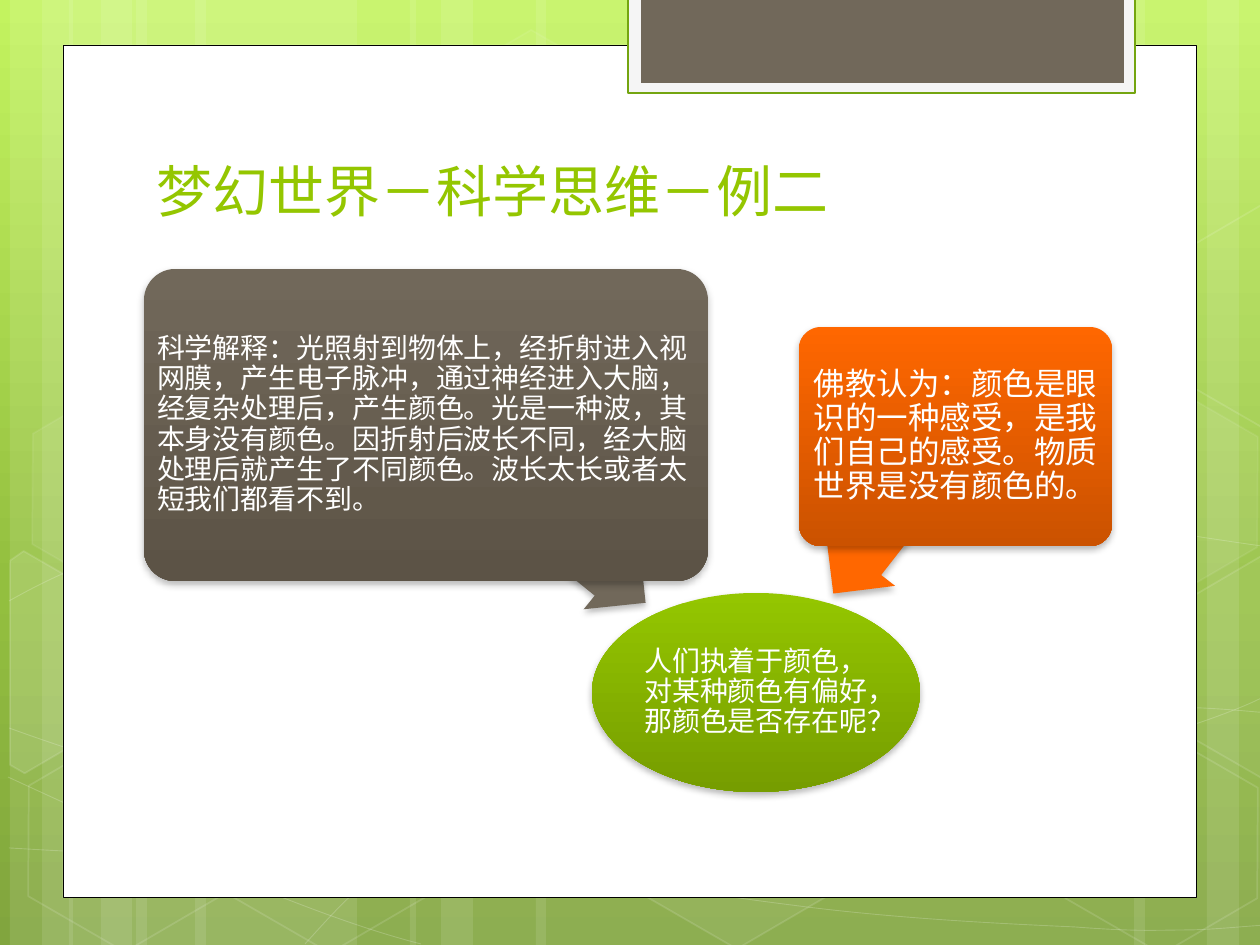
"""Builds the slide on colour as seen by science and by Buddhism."""
from copy import deepcopy

from lxml import etree
from pptx import Presentation
from pptx.dml.color import RGBColor
from pptx.enum.shapes import MSO_SHAPE
from pptx.enum.text import MSO_ANCHOR, PP_ALIGN
from pptx.oxml.ns import qn
from pptx.util import Pt

RECTANGLE, HEXAGON, ELLIPSE = MSO_SHAPE.RECTANGLE, MSO_SHAPE.HEXAGON, MSO_SHAPE.OVAL
ROUNDED, ARROW = MSO_SHAPE.ROUNDED_RECTANGLE, MSO_SHAPE.LEFT_ARROW
MIDDLE, BOTTOM = MSO_ANCHOR.MIDDLE, MSO_ANCHOR.BOTTOM
LEFT, CENTER = PP_ALIGN.LEFT, PP_ALIGN.CENTER
PX = 914400 / 126

THEME = {
    "font": "League Spartan", "title": 32, "large": 18, "body": 16,
    "white": "FFFFFF", "black": "000000", "pale": "F5F5F5", "border": "74A510",
    "green": "94C600", "green_dark": "769D00",
    "brown": "71685A", "brown_dark": "5C5346",
    "orange": "FF6700", "orange_dark": "CB5200",
    "background": [(0, "C3F35F"), (0.62, "93BF3F"), (1, "81A53E")],
}


def paint(shape, fills=(), fill_alpha=100, line=None, line_width=1, line_alpha=100, shadow=False):
    shape.shadow.inherit = False
    if len(fills) == 2:
        shape.fill.gradient()
        shape.fill.gradient_angle = 270
        for stop, position, name in zip(shape.fill.gradient_stops, (0, 1), fills):
            stop.position = position
            stop.color.rgb = RGBColor.from_string(THEME[name])
    elif fills:
        shape.fill.solid()
        shape.fill.fore_color.rgb = RGBColor.from_string(THEME[fills[0]])
    else:
        shape.fill.background()
    if line:
        shape.line.color.rgb = RGBColor.from_string(THEME[line])
        shape.line.width = Pt(line_width)
    else:
        shape.line.fill.background()
    for location, alpha in (("", fill_alpha), ("a:ln/", line_alpha)):
        if alpha < 100:
            for color in shape.element.xpath(f"./p:spPr/{location}a:solidFill/a:srgbClr"):
                etree.SubElement(color, qn("a:alpha"), val=str(alpha * 1000))
    if shadow:
        effects = shape.element.xpath("./p:spPr/a:effectLst")[0]
        outer = etree.SubElement(effects, qn("a:outerShdw"), blurRad=str(Pt(4)),
                                 dist=str(Pt(2)), dir="5400000", rotWithShape="0")
        color = etree.SubElement(outer, qn("a:srgbClr"), val=THEME["black"])
        etree.SubElement(color, qn("a:alpha"), val="28000")


def write(shape, text, size, color, anchor, alignment, spacing, inset=None):
    frame = shape.text_frame
    frame_format = {"word_wrap": True, "vertical_anchor": anchor}
    if inset is not None:
        for side in ("left", "top", "right", "bottom"):
            frame_format[f"margin_{side}"] = round(inset * PX)
    paragraph = frame.paragraphs[0]
    run = paragraph.add_run()
    run.text = text
    formats = (
        (frame, frame_format),
        (paragraph, {"alignment": alignment, "line_spacing": spacing}),
        (run.font, {"name": THEME["font"], "size": Pt(THEME[size])}),
        (run.font.color, {"rgb": RGBColor.from_string(THEME[color])}),
    )
    for target, values in formats:
        for name, value in values.items():
            setattr(target, name, value)


presentation = Presentation()
presentation.slide_width = round(1260 * PX)
presentation.slide_height = round(945 * PX)
slide = presentation.slides.add_slide(presentation.slide_layouts[6])
shapes = slide.shapes

background = slide.background.fill
background.gradient()
background.gradient_angle = 270
stop_list = slide.element.xpath(".//a:gsLst")[0]
stop_list.append(deepcopy(stop_list[-1]))
for stop, (position, color) in zip(background.gradient_stops, THEME["background"]):
    stop.position = position
    stop.color.rgb = RGBColor.from_string(color)

STRIPES = [(136, 221), (10, 63), (42, 105), (195, 221), (69, 63), (101, 105),
           (924, 221), (1207, 63), (1134, 105), (536, 388), (410, 63), (441, 105)]
for left, width in STRIPES:
    stripe = shapes.add_shape(RECTANGLE, *(round(v * PX) for v in (left, 0, width, 945)))
    paint(stripe, ["white"], 10)

CURVES = [
    [(9, 848), (77, 852), (145, 856), (239, 854), (334, 853), (451, 851), (577, 838),
     (703, 825), (882, 801), (998, 777), (1113, 753), (1231, 716), (1269, 694)],
    [(9, 601), (45, 581), (82, 562), (152, 543), (224, 524), (326, 496), (437, 488),
     (549, 479), (685, 478), (824, 488), (963, 498), (1193, 537), (1269, 547)],
    [(8, 777), (160, 847), (311, 916), (421, 944)],
    [(9, 728), (48, 742), (88, 756), (161, 776), (234, 795), (344, 827), (450, 848),
     (554, 869), (687, 892), (791, 905), (896, 919), (1008, 924), (1075, 927),
     (1140, 932), (1158, 930), (1191, 930), (1223, 929), (1246, 926), (1269, 925)],
    [(305, 944), (328, 919), (350, 893), (381, 871), (411, 848), (454, 823), (489, 805),
     (524, 788), (546, 780), (592, 767), (638, 754), (722, 737), (766, 728),
     (811, 719), (818, 719), (857, 717), (896, 713), (958, 709), (1000, 708),
     (1045, 707), (1116, 708), (1116, 708), (1116, 708), (1201, 708), (1201, 708),
     (1223, 709), (1245, 711), (1256, 712), (1268, 713), (1264, 712), (1268, 713)],
]
for points in CURVES:
    builder = shapes.build_freeform(*points[0], scale=PX)
    builder.add_line_segments(points[1:], close=False)
    curve = builder.convert_to_shape()
    segments = curve.element.xpath(".//a:lnTo")
    for first in range(0, len(segments), 3):
        bezier = etree.Element(qn("a:cubicBezTo"))
        segments[first].addprevious(bezier)
        for segment in segments[first:first + 3]:
            bezier.append(segment[0])
            segment.getparent().remove(segment)
    paint(curve, line="white", line_width=0.5, line_alpha=20)

HEXAGONS = [(421, 45, 4, 8), (626, 742, 6, 12), (14, 745, 0, 12), (18, 393, 7, 8),
            (219, 746, 0, 12), (949, 571, 10, 12), (1051, 747, 0, 12), (1051, 396, 7, 8)]
for left, top, fill_alpha, line_alpha in HEXAGONS:
    hexagon = shapes.add_shape(HEXAGON, *(round(v * PX) for v in (left, top, 221, 192)))
    hexagon.adjustments[0] = 0.285
    hexagon.rotation = 30
    paint(hexagon, ["white"] if fill_alpha else [], fill_alpha, "white", 1, line_alpha)

CUT_LEFT = [(0, 15), (7, 0), (119, 0), (173, 97), (119, 192), (102, 192)]
CUT_RIGHT = [(0, 95), (54, 0), (65, 0), (171, 182), (166, 192), (55, 192)]
CUT_HEXAGONS = [(-42, 578, 10, CUT_LEFT), (1155, 559, 4, CUT_RIGHT), (1155, 208, 0, CUT_RIGHT)]
for left, top, fill_alpha, corners in CUT_HEXAGONS:
    builder = shapes.build_freeform(*corners[0], scale=PX)
    builder.add_line_segments(corners[1:], close=True)
    cut_hexagon = builder.convert_to_shape(round(left * PX), round(top * PX))
    cut_hexagon.rotation = 30
    paint(cut_hexagon, ["white"] if fill_alpha else [], fill_alpha, "white", 1, 12)

PANELS = [((63, 45, 1134, 853), "white", "black", 0.5),
          ((628, -3, 507, 96), "pale", "border", 1.25),
          ((641, -3, 483, 86), "brown", None, 0)]
for box, fill, line, width in PANELS:
    panel = shapes.add_shape(RECTANGLE, *(round(v * PX) for v in box))
    paint(panel, [fill], line=line, line_width=width)

title = shapes.add_textbox(*(round(v * PX) for v in (144, 142, 968, 88)))
write(title, "梦幻世界－科学思维－例二", "title", "green", BOTTOM, LEFT, 1)

DIAGRAM = [
    (ELLIPSE, (592, 593, 328, 199), 0, [], ["green", "green_dark"],
     ("人们执着于颜色，对某种颜色有偏好，那颜色是否存在呢？", "body", CENTER, 1)),
    (ARROW, (395, 470, 282, 88), 219, [0.6, 0.5], ["brown"], None),
    (ROUNDED, (144, 269, 564, 312), 0, [0.1], ["brown", "brown_dark"],
     ("科学解释：光照射到物体上，经折射进入视网膜，产生电子脉冲，通过神经进入大脑，"
      "经复杂处理后，产生颜色。光是一种波，其本身没有颜色。因折射后波长不同，"
      "经大脑处理后就产生了不同颜色。波长太长或者太短我们都看不到。", "body", LEFT, 4)),
    (ARROW, (795, 471, 199, 88), 307.9, [0.6, 0.5], ["orange"], None),
    (ROUNDED, (799, 327, 313, 219), 0, [0.1], ["orange", "orange_dark"],
     ("佛教认为：颜色是眼识的一种感受，是我们自己的感受。物质世界是没有颜色的。",
      "large", CENTER, 5)),
]
for kind, box, rotation, adjustments, fills, label in DIAGRAM:
    shape = shapes.add_shape(kind, *(round(v * PX) for v in box))
    shape.rotation = rotation
    for index, value in enumerate(adjustments):
        shape.adjustments[index] = value
    paint(shape, fills, shadow=True)
    if label:
        text, size, alignment, inset = label
        write(shape, text, size, "white", MIDDLE, alignment, 0.9, inset)

presentation.save("out.pptx")
